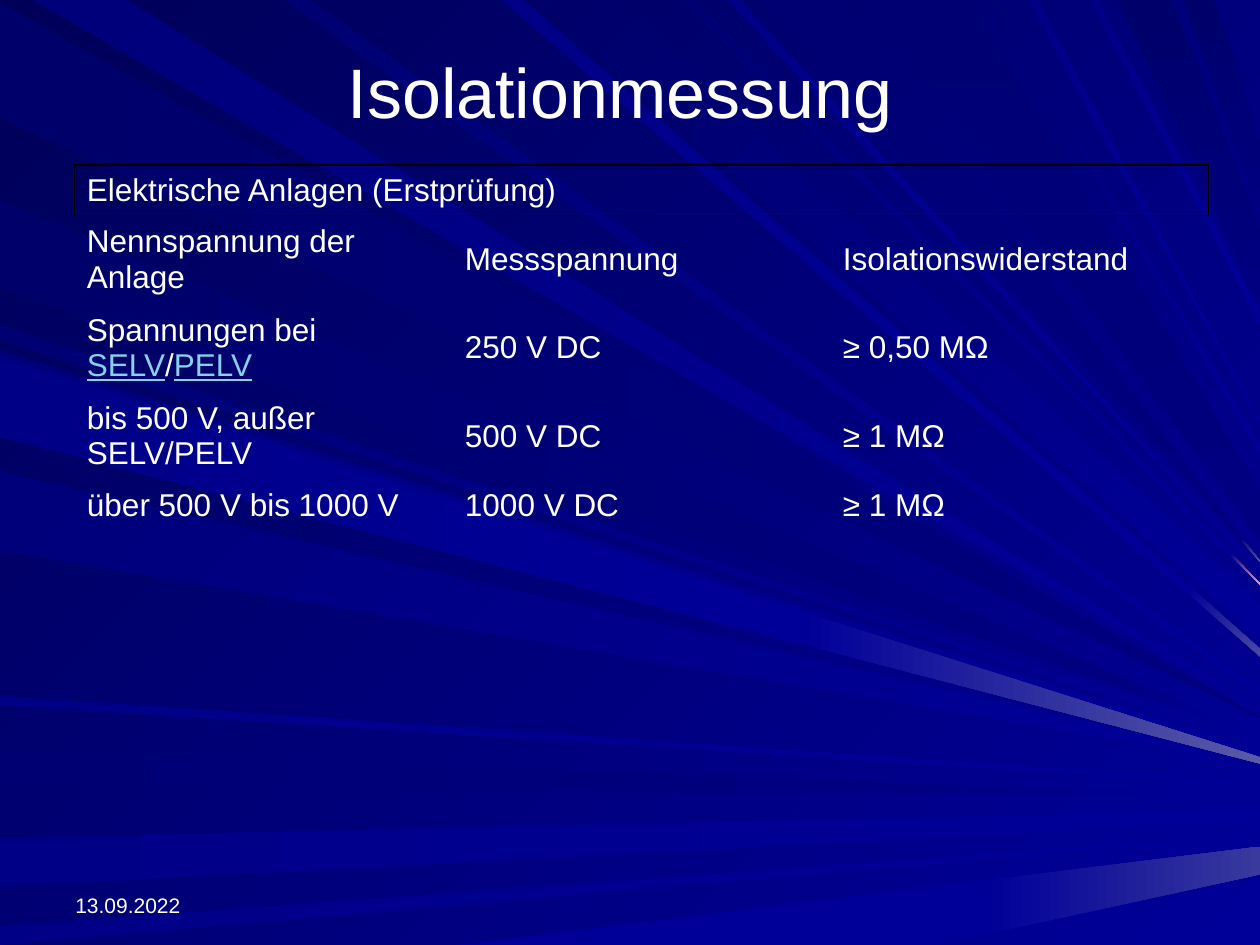
from lxml.etree import SubElement
from pptx import Presentation
from pptx.dml.color import RGBColor
from pptx.enum.text import MSO_ANCHOR as Anchor, PP_ALIGN as Align
from pptx.oxml.ns import qn
from pptx.util import Inches, Pt

GRID = Inches(0.01)
WIDTH, HEIGHT = 1000, 750
FONT = "Arial"
NO_STYLE = "{2D5ABB26-0587-4C30-8999-92F81FD0307C}"

WHITE = RGBColor.from_string("FFFFFF")
LINK = RGBColor.from_string("86D1EC")
MIDNIGHT = RGBColor.from_string("000058")
INK = RGBColor.from_string("00006B")
DEEP = RGBColor.from_string("000073")
MARINE = RGBColor.from_string("00007B")
NAVY = RGBColor.from_string("000080")
COBALT = RGBColor.from_string("000087")
ROYAL = RGBColor.from_string("000099")
DIM_HAZE = RGBColor.from_string("39399E")
HAZE = RGBColor.from_string("4A4AA1")
BRIGHT_HAZE = RGBColor.from_string("5A5AA6")
SPARK = RGBColor.from_string("FF9999")

DULL, ACROSS = (NAVY, 0), (ROYAL, 0)
SLANT, DOWN = (ROYAL, 45), (NAVY, 90)

BEAMS = [
    ("left", 2, 93, 569, INK, DULL),
    ("top", 101, 26, 562, MARINE, SLANT),
    ("left", 596, 623, 631, DEEP, DULL, 1, 701, ROYAL),
    ("left", 665, 704, 643, COBALT, ACROSS, 8),
    ("left", 735, 750, 662, COBALT, ACROSS),
    ("bottom", 364, 742, 672, ROYAL, ACROSS, 22, 780, DIM_HAZE),
    ("left", 258, 270, 589, DEEP, SLANT),
    ("left", 159, 228, 584, INK, DULL, 1, 873, ROYAL),
    ("top", 416, 398, 515, COBALT, SLANT, 6, 945, HAZE),
    ("top", 492, 426, 479, INK, SLANT, 28),
    ("top", 552, 540, 463, DEEP, SLANT, 1, 977, SPARK),
    ("top", 661, 606, 445, DEEP, DOWN, 1, 986, BRIGHT_HAZE),
    ("top", 930, 887, 183, INK, DOWN, 54),
    ("top", 964, 939, 114, INK, DOWN, 53),
    ("left", 278, 342, 596, MARINE, SLANT, 6),
    ("left", 374, 437, 605, MARINE, SLANT),
    ("left", 552, 560, 621, COBALT, ACROSS, 2),
    ("top", 247, 225, 547, DEEP, SLANT, 5),
    ("top", 588, 577, 453, COBALT, SLANT),
    ("top", 770, 686, 390, DEEP, DOWN, 38),
    ("top", 792, 785, 354, DEEP, SLANT, 6),
    ("top", 824, 815, 335, COBALT, SLANT),
    ("top", 872, 865, 249, COBALT, SLANT, 9),
    ("left", 283, 347, 601, COBALT, ACROSS, 5, 635, BRIGHT_HAZE),
]

HEADING = "Elektrische Anlagen (Erstprüfung)"
SELV_RUNS = [("Spannungen bei ", False), ("SELV", True), ("/", False), ("PELV", True)]
ROWS = [
    ["Nennspannung der Anlage", "Messspannung", "Isolationswiderstand"],
    [SELV_RUNS, "250 V DC", "≥ 0,50 MΩ"],
    ["bis 500 V, außer SELV/PELV", "500 V DC", "≥ 1 MΩ"],
    ["über 500 V bis 1000 V", "1000 V DC", "≥ 1 MΩ"],
]
ROW_HEIGHTS = [40, 70, 70, 70, 40]
HEADING_BORDERS = [("lnL", "lnR", "lnT", "lnB"), ("lnT",), ("lnR", "lnT")]


def paint(fill, start, end, angle):
    if start == end:
        fill.solid()
        fill.fore_color.rgb = start
        return
    fill.gradient()
    fill.gradient_angle = -angle % 360
    for stop, color in zip(fill.gradient_stops, (start, end)):
        stop.color.rgb = color


def add_facet(slide, points, start, end, angle):
    builder = slide.shapes.build_freeform(*points[0], scale=GRID)
    builder.add_line_segments(points[1:], close=True)
    shape = builder.convert_to_shape()
    shape.shadow.inherit = False
    shape.line.fill.background()
    paint(shape.fill, start, end, angle)


def edge_point(edge, offset):
    return {"left": (0, offset), "top": (offset, 0), "bottom": (offset, HEIGHT)}[edge]


def point_at(x, start, end):
    share = (x - start[0]) / (end[0] - start[0])
    return x, start[1] + share * (end[1] - start[1])


def add_beam(slide, edge, upper, lower, tip, shade, style, tip_height=1, seam=WIDTH, glow=None):
    end, angle = style
    sides = [
        (edge_point(edge, upper), (WIDTH, tip)),
        (edge_point(edge, lower), (WIDTH, tip + tip_height)),
    ]
    seam_top, seam_bottom = (point_at(seam, *side) for side in sides)
    (near_top, far_top), (near_bottom, far_bottom) = sides
    add_facet(slide, [near_top, seam_top, seam_bottom, near_bottom], shade, end, angle)
    if glow is not None:
        add_facet(slide, [seam_top, far_top, far_bottom, seam_bottom], end, glow, angle)


def write_text(text_frame, text, size=18, align=Align.LEFT):
    paragraph = text_frame.paragraphs[0]
    paragraph.alignment = align
    for words, linked in [(text, False)] if isinstance(text, str) else text:
        run = paragraph.add_run()
        run.text = words
        run.font.name = FONT
        run.font.size = Pt(size)
        run.font.color.rgb = LINK if linked else WHITE
        run.font.underline = linked


def add_text(slide, text, area, anchor=Anchor.MIDDLE, **text_format):
    box = slide.shapes.add_textbox(*(GRID * length for length in area))
    box.text_frame.word_wrap = True
    box.text_frame.vertical_anchor = anchor
    write_text(box.text_frame, text, **text_format)


def add_borders(cell, sides):
    properties = cell._tc.get_or_add_tcPr()
    for side in sides:
        line = SubElement(properties, qn(f"a:{side}"), w=str(Pt(1)))
        fill = SubElement(line, qn("a:solidFill"))
        SubElement(fill, qn("a:srgbClr"), val="000000")


def add_measurement_table(slide):
    frame = slide.shapes.add_table(
        len(ROW_HEIGHTS), 3, GRID * 59, GRID * 131, GRID * 900, GRID * sum(ROW_HEIGHTS)
    )
    table = frame.table
    table.first_row = table.horz_banding = False
    table._tbl.tblPr.find(qn("a:tableStyleId")).text = NO_STYLE
    for row, height in zip(table.rows, ROW_HEIGHTS):
        row.height = GRID * height
    for column, sides in enumerate(HEADING_BORDERS):
        add_borders(table.cell(0, column), sides)
    table.cell(0, 0).merge(table.cell(0, 2))
    for row, texts in enumerate([[HEADING]] + ROWS):
        for column, text in enumerate(texts):
            cell = table.cell(row, column)
            cell.vertical_anchor = Anchor.MIDDLE
            write_text(cell.text_frame, text)
    for cell in table.iter_cells():
        cell.fill.background()


def main():
    presentation = Presentation()
    presentation.slide_width = GRID * WIDTH
    presentation.slide_height = GRID * HEIGHT
    slide = presentation.slides.add_slide(presentation.slide_layouts[6])
    paint(slide.background.fill, MIDNIGHT, ROYAL, 45)
    for beam in BEAMS:
        add_beam(slide, *beam)
    add_text(slide, "13.09.2022", (50, 683, 233, 50), anchor=Anchor.BOTTOM, size=12)
    add_text(slide, "Isolationmessung", (177, 44, 630, 55), size=40, align=Align.CENTER)
    add_measurement_table(slide)
    presentation.save("out.pptx")


if __name__ == "__main__":
    main()
